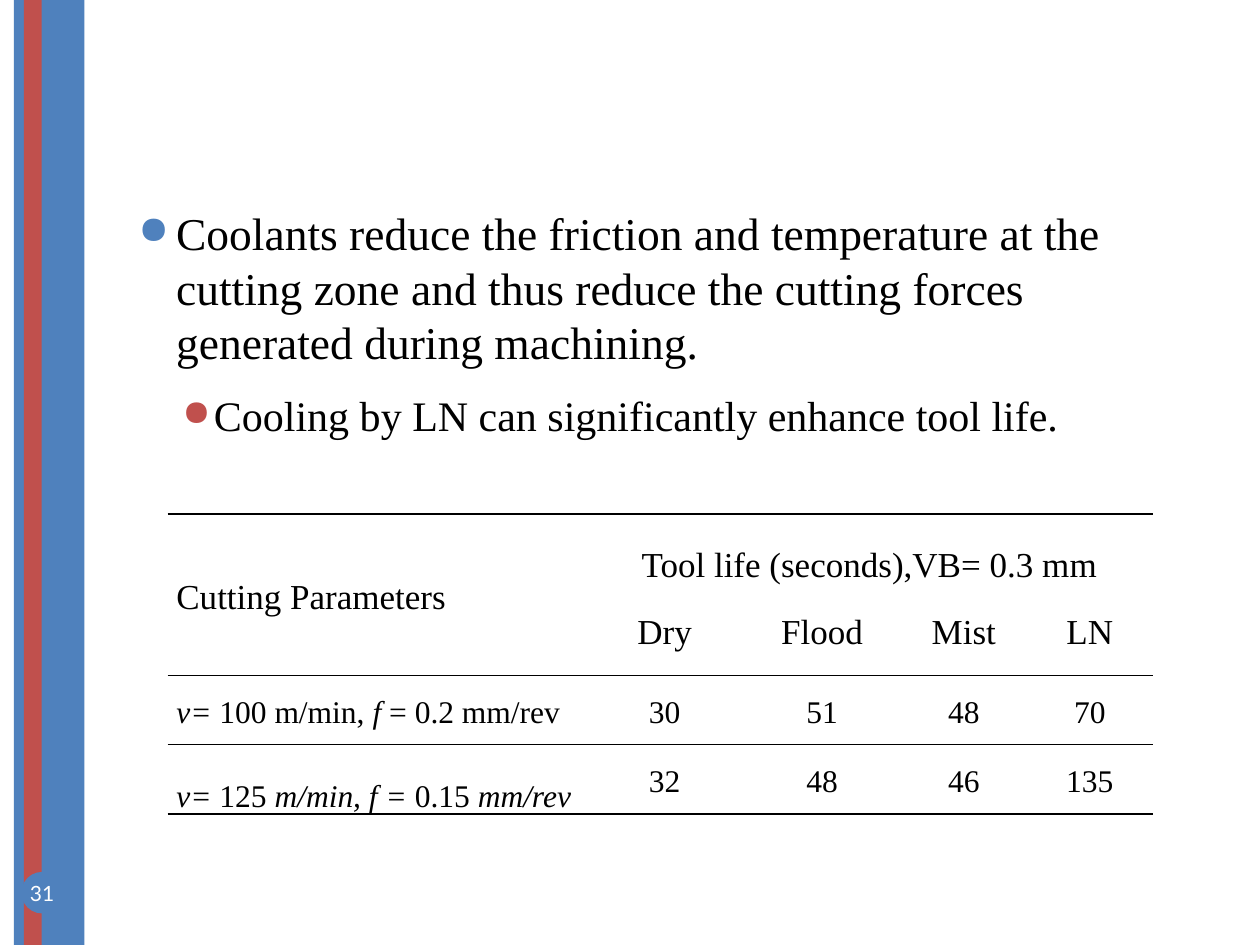
from dataclasses import dataclass

from lxml.etree import SubElement
from pptx import Presentation
from pptx.dml.color import RGBColor
from pptx.enum.shapes import MSO_SHAPE
from pptx.enum.text import MSO_ANCHOR, PP_ALIGN
from pptx.oxml.ns import qn
from pptx.util import Inches, Pt


@dataclass(frozen=True)
class Theme:
    blue: str = "4F81BD"
    red: str = "C0504D"
    black: str = "000000"
    white: str = "FFFFFF"
    serif: str = "Times New Roman"
    sans: str = "Lato"
    bullet_size: int = 26
    sub_bullet_size: int = 24
    header_size: int = 20
    data_size: int = 18
    number_size: int = 12


THEME = Theme()
PLAIN_TABLE_STYLE = "{2D5ABB26-0587-4C30-8999-92F81FD0307C}"


def apply_format(target, values):
    for name, value in values.items():
        setattr(target, name, value)


def add_run(paragraph, text, size, color=THEME.black, font=THEME.serif, italic=False):
    run = paragraph.add_run()
    run.text = text
    apply_format(run.font, {"name": font, "size": Pt(size), "italic": italic})
    run.font.color.rgb = RGBColor.from_string(color)


def add_filled_shape(slide, kind, left, top, width, height, color):
    shape = slide.shapes.add_shape(
        kind, Inches(left), Inches(top), Inches(width), Inches(height))
    shape.shadow.inherit = False
    shape.fill.solid()
    shape.fill.fore_color.rgb = RGBColor.from_string(color)
    shape.line.fill.background()
    return shape


def add_side_band(slide, center, thickness, color):
    """A full-height band, drawn as a horizontal bar turned upright."""
    length = 7.5
    band = add_filled_shape(slide, MSO_SHAPE.RECTANGLE, center - length / 2,
                            (length - thickness) / 2, length, thickness, color)
    band.rotation = 90


def add_page_number(slide, number):
    badge = add_filled_shape(slide, MSO_SHAPE.OVAL, 0.17, 6.92, 0.33, 0.33, THEME.blue)
    apply_format(badge.text_frame, {
        "margin_left": 0, "margin_right": 0, "margin_top": 0, "margin_bottom": 0,
        "word_wrap": False, "vertical_anchor": MSO_ANCHOR.MIDDLE})
    paragraph = badge.text_frame.paragraphs[0]
    paragraph.alignment = PP_ALIGN.CENTER
    add_run(paragraph, number, THEME.number_size, THEME.white, THEME.sans)


def add_bullet(paragraph, text, size, color, margin, hanging):
    apply_format(paragraph, {"space_before": Pt(6), "space_after": Pt(6)})
    properties = paragraph._p.get_or_add_pPr()
    properties.set("marL", str(Inches(margin)))
    properties.set("indent", str(-Inches(hanging)))
    bullet_color = SubElement(properties, qn("a:buClr"))
    SubElement(bullet_color, qn("a:srgbClr"), val=color)
    SubElement(properties, qn("a:buSzPct"), val="85000")
    SubElement(properties, qn("a:buChar"), char="●")
    add_run(paragraph, text, size)


def add_body(slide, bullets):
    box = slide.shapes.add_textbox(Inches(1), Inches(1.58), Inches(8.5), Inches(5))
    frame = box.text_frame
    frame.word_wrap = True
    for index, bullet in enumerate(bullets):
        paragraph = frame.add_paragraph() if index else frame.paragraphs[0]
        add_bullet(paragraph, *bullet)


def set_borders(cell, ruled_edges):
    properties = cell._tc.get_or_add_tcPr()
    for edge in ("lnL", "lnR", "lnT", "lnB"):
        line = SubElement(properties, qn(f"a:{edge}"), w=str(Pt(1)))
        if edge in ruled_edges:
            fill = SubElement(line, qn("a:solidFill"))
            SubElement(fill, qn("a:srgbClr"), val=THEME.black)
        else:
            SubElement(line, qn("a:noFill"))


def fill_cell(cell, runs, size, alignment, anchor=MSO_ANCHOR.MIDDLE):
    """Write (text, italic) runs into a cell."""
    apply_format(cell, {
        "margin_left": Inches(0.07), "margin_right": Inches(0.07),
        "margin_top": 0, "margin_bottom": 0, "vertical_anchor": anchor})
    paragraph = cell.text_frame.paragraphs[0]
    apply_format(paragraph, {"alignment": alignment, "line_spacing": 1.15})
    for text, italic in runs:
        add_run(paragraph, text, size, italic=italic)


def add_tool_life_table(slide, coolants, data_rows):
    widths = [3.32, 1.25, 1.25, 1, 1]
    heights = [0.56, 0.72, 0.55, 0.55]
    table = slide.shapes.add_table(
        len(heights), len(widths), Inches(1.33), Inches(4.08),
        Inches(sum(widths)), Inches(sum(heights))).table
    apply_format(table, {"first_row": False, "horz_banding": False})
    table._tbl.tblPr.find(qn("a:tableStyleId")).text = PLAIN_TABLE_STYLE
    for column, width in zip(table.columns, widths):
        column.width = Inches(width)
    for row, height in zip(table.rows, heights):
        row.height = Inches(height)

    # Rules above the header and each data row, and below the table
    edges_by_row = [("lnT",), (), ("lnT",), ("lnT", "lnB")]
    for row, edges in zip(table.rows, edges_by_row):
        for cell in row.cells:
            set_borders(cell, edges)
            cell.fill.background()

    # Header
    table.cell(0, 0).merge(table.cell(1, 0))
    table.cell(0, 1).merge(table.cell(0, 4))
    fill_cell(table.cell(0, 0), [("Cutting Parameters", False)],
              THEME.header_size, PP_ALIGN.LEFT)
    fill_cell(table.cell(0, 1), [("Tool life (seconds),VB= 0.3 mm", False)],
              THEME.header_size, PP_ALIGN.CENTER, MSO_ANCHOR.BOTTOM)
    for column, name in enumerate(coolants, 1):
        fill_cell(table.cell(1, column), [(name, False)],
                  THEME.header_size, PP_ALIGN.CENTER)

    # Data
    for row, (parameters, anchor, values) in enumerate(data_rows, 2):
        fill_cell(table.cell(row, 0), parameters, THEME.data_size,
                  PP_ALIGN.JUSTIFY, anchor)
        for column, value in enumerate(values, 1):
            fill_cell(table.cell(row, column), [(str(value), False)],
                      THEME.data_size, PP_ALIGN.CENTER)


def main():
    presentation = Presentation()
    apply_format(presentation, {"slide_width": Inches(10), "slide_height": Inches(7.5)})
    slide = presentation.slides.add_slide(presentation.slide_layouts[6])

    # Side bands and page number
    add_side_band(slide, 0.39, 0.56, THEME.blue)
    add_side_band(slide, 0.26, 0.14, THEME.red)
    add_page_number(slide, "31")

    # Statement
    add_body(slide, [
        ("Coolants reduce the friction and temperature at the cutting zone and thus "
         "reduce the cutting forces generated during machining.",
         THEME.bullet_size, THEME.blue, 0.3, 0.3),
        ("Cooling by LN can significantly enhance tool life.",
         THEME.sub_bullet_size, THEME.red, 0.6, 0.25),
    ])

    # Tool life by coolant
    add_tool_life_table(slide, ["Dry", "Flood", "Mist", "LN"], [
        ([("v= ", True), ("100 m/min, ", False), ("f", True), (" = 0.2 mm/rev", False)],
         MSO_ANCHOR.MIDDLE, [30, 51, 48, 70]),
        ([("v= ", True), ("125 ", False), ("m/min, f = ", True), ("0.15 ", False),
          ("mm/rev", True)],
         MSO_ANCHOR.BOTTOM, [32, 48, 46, 135]),
    ])

    presentation.save("out.pptx")


if __name__ == "__main__":
    main()
